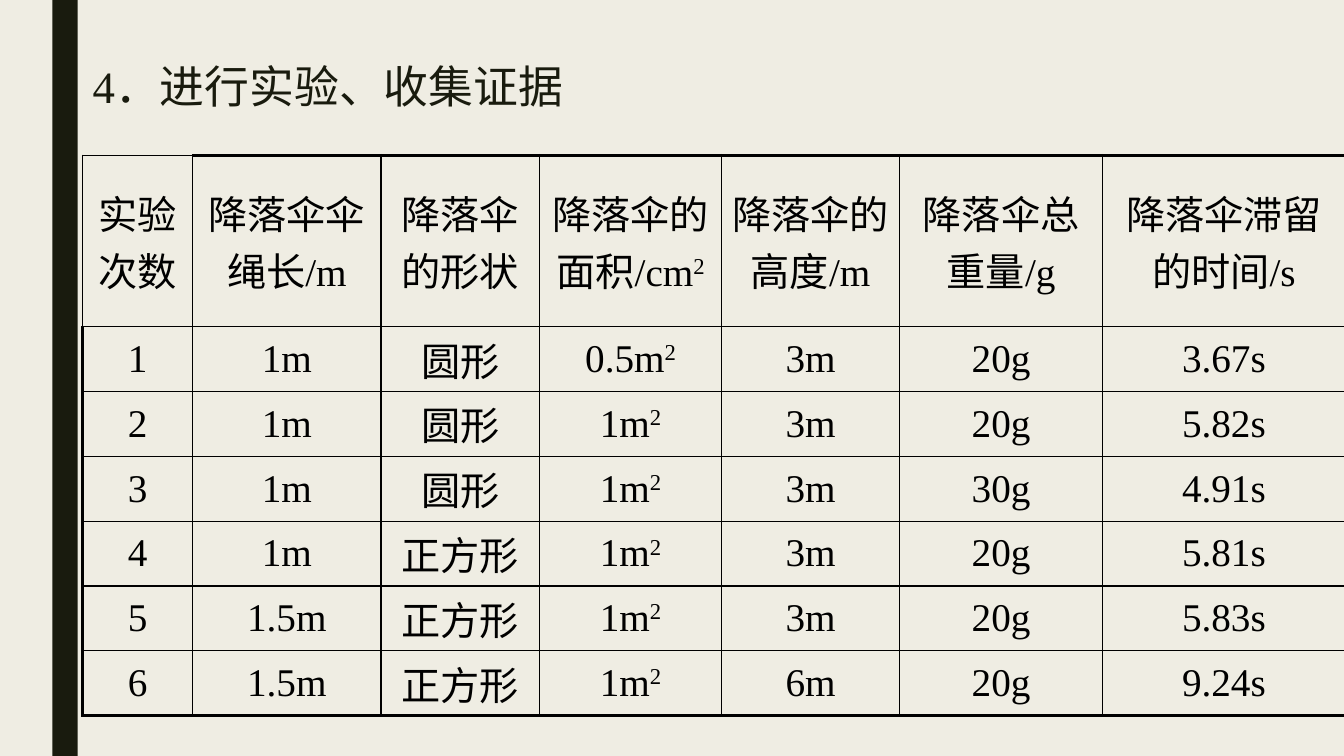
import pptx
import pptx.chart.data
import pptx.dml.color
import pptx.enum.shapes
import pptx.enum.text
import pptx.oxml
import pptx.oxml.ns
import pptx.util
from dataclasses import dataclass

Inches = pptx.util.Inches
Pt = pptx.util.Pt


@dataclass(frozen=True)
class Theme:
    paper: str = "EFEDE3"
    dark: str = "191B0E"
    ink: str = "000000"
    font: str = "Times New Roman"
    title: int = 32
    body: int = 28
    thin: float = 1
    thick: float = 2.25


THEME = Theme()

# "^" sets off a superscript
HEADS = ["实验次数", "降落伞伞绳长/m", "降落伞的形状", "降落伞的面积/cm^2",
         "降落伞的高度/m", "降落伞总重量/g", "降落伞滞留的时间/s"]
TRIALS = [
    ["1", "1m", "圆形", "0.5m^2", "3m", "20g", "3.67s"],
    ["2", "1m", "圆形", "1m^2", "3m", "20g", "5.82s"],
    ["3", "1m", "圆形", "1m^2", "3m", "30g", "4.91s"],
    ["4", "1m", "正方形", "1m^2", "3m", "20g", "5.81s"],
    ["5", "1.5m", "正方形", "1m^2", "3m", "20g", "5.83s"],
    ["6", "1.5m", "正方形", "1m^2", "6m", "20g", "9.24s"],
]
WIDTHS = [1.09, 1.87, 1.57, 1.81, 1.76, 2.02, 2.4]
HEAD_H = 1.7


def color(code):
    return pptx.dml.color.RGBColor.from_string(code)


def add_run(para, text, size, code, raised=False):
    run = para.add_run()
    run.text = text
    run.font.size = Pt(size)
    run.font.name = THEME.font
    run.font.color.rgb = color(code)
    if raised:
        run._r.get_or_add_rPr().set("baseline", "30000")


def set_edges(cell, widths):
    """Draw the cell's borders, given points by side."""
    props = cell._tc.get_or_add_tcPr()
    for index, (side, width) in enumerate(widths.items()):
        line = pptx.oxml.parse_xml(
            f'<a:ln{side} {pptx.oxml.ns.nsdecls("a")} w="{Pt(width)}">'
            f'<a:solidFill><a:srgbClr val="{THEME.ink}"/></a:solidFill>'
            f'</a:ln{side}>')
        props.insert(index, line)


def add_bar(slide, left, top, width, height):
    bar = slide.shapes.add_shape(
        pptx.enum.shapes.MSO_SHAPE.RECTANGLE,
        Inches(left), Inches(top), Inches(width), Inches(height))
    bar.shadow.inherit = False
    bar.fill.solid()
    bar.fill.fore_color.rgb = color(THEME.dark)
    bar.line.fill.background()


def add_title(slide, left, top, width, height):
    box = slide.shapes.add_textbox(
        Inches(left), Inches(top), Inches(width), Inches(height))
    box.text_frame.word_wrap = True
    para = box.text_frame.paragraphs[0]
    para.line_spacing = 2.0
    add_run(para, "4．进行实验、收集证据", THEME.title, THEME.dark)


def fill_cell(cell, text, inset):
    cell.fill.background()
    cell.vertical_anchor = pptx.enum.text.MSO_ANCHOR.MIDDLE
    cell.margin_left = cell.margin_right = Inches(0.1)
    cell.margin_top = cell.margin_bottom = Inches(inset)
    para = cell.text_frame.paragraphs[0]
    para.alignment = pptx.enum.text.PP_ALIGN.CENTER
    base, _, power = text.partition("^")
    add_run(para, base, THEME.body, THEME.ink)
    if power:
        add_run(para, power, THEME.body, THEME.ink, raised=True)


def add_grid(slide, left, top, width, height):
    rows = [HEADS] + TRIALS
    table = slide.shapes.add_table(
        len(rows), len(HEADS), Inches(left), Inches(top),
        Inches(width), Inches(height)).table
    table.first_row = table.horz_banding = False

    # Column widths, a tall head and equal trial rows
    for col, share in zip(table.columns, WIDTHS):
        col.width = Inches(width * share / sum(WIDTHS))
    for r, row in enumerate(table.rows):
        row.height = Inches((height - HEAD_H) / len(TRIALS) if r else HEAD_H)

    # Cells, with a thick frame except around the top left corner
    for r, row in enumerate(rows):
        for c, text in enumerate(row):
            cell = table.cell(r, c)
            fill_cell(cell, text, 0.04 if r and c else 0.05)
            thick = {"L": c == 0 and r > 0, "R": c == len(row) - 1,
                     "T": r == 0 and c > 0, "B": r == len(rows) - 1}
            set_edges(cell, {side: THEME.thick if on else THEME.thin
                             for side, on in thick.items()})


def main():
    deck = pptx.Presentation()
    deck.slide_width, deck.slide_height = Inches(13.33), Inches(7.5)
    slide = deck.slides.add_slide(deck.slide_layouts[6])
    slide.background.fill.solid()
    slide.background.fill.fore_color.rgb = color(THEME.paper)
    add_bar(slide, 0.52, 0, 0.25, 7.5)
    add_grid(slide, 0.82, 1.54, 12.52, 5.56)
    add_title(slide, 0.82, 0, 12.52, 1.54)
    deck.save("out.pptx")


if __name__ == "__main__":
    main()
